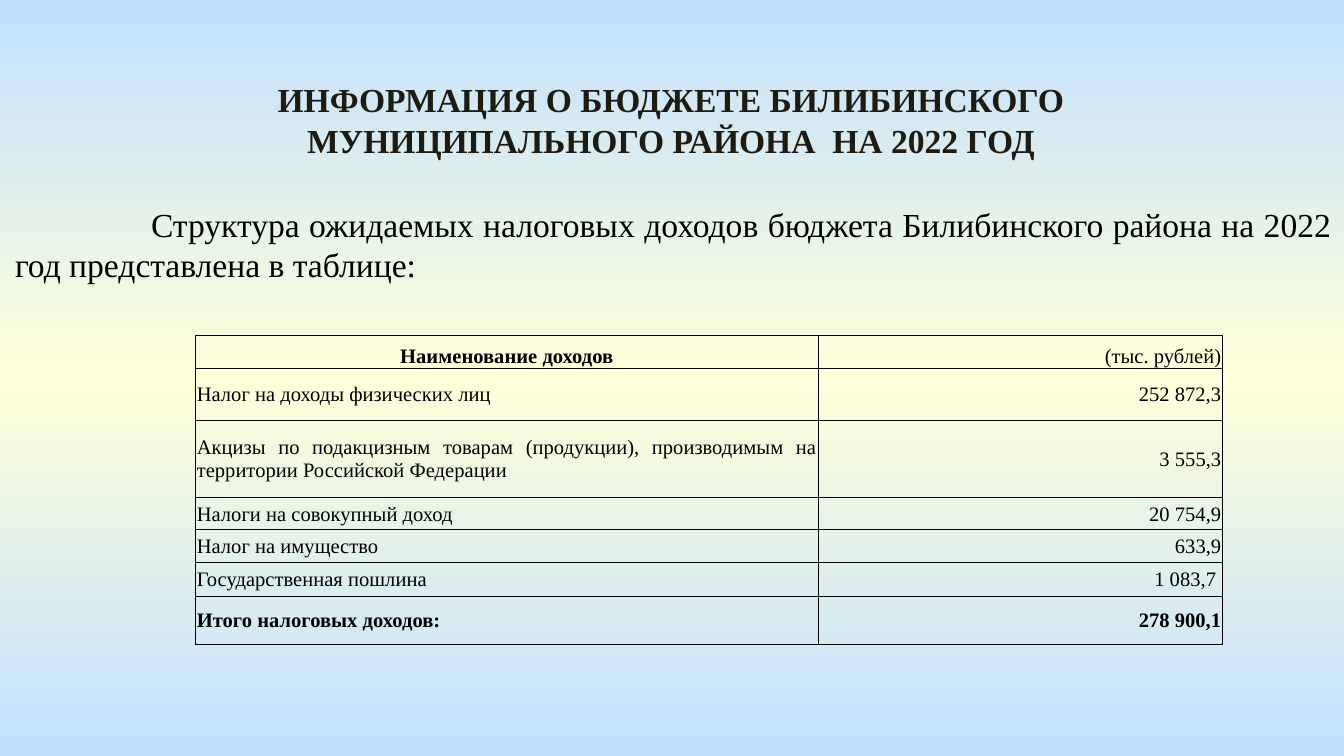
from copy import deepcopy

from lxml import etree
from pptx import Presentation
from pptx import util as u
from pptx.dml.color import RGBColor
from pptx.enum import text as t
from pptx.oxml import ns

FONT = "Times New Roman"
INK = "000000"
ALIGN = {"l": t.PP_ALIGN.LEFT, "c": t.PP_ALIGN.CENTER,
         "r": t.PP_ALIGN.RIGHT, "j": t.PP_ALIGN.JUSTIFY}
HEAD = ("Наименование доходов", "(тыс. рублей)")
TAXES = [
    ("Налог на доходы физических лиц", "252 872,3"),
    ("Акцизы по подакцизным товарам (продукции), производимым на "
     "территории Российской Федерации", "3 555,3"),
    ("Налоги на совокупный доход", "20 754,9"),
    ("Налог на имущество", "633,9"),
    ("Государственная пошлина", "1 083,7 "),
]
TOTAL = ("Итого налоговых доходов:", "278 900,1")
WIDTHS = (11.76, 7.64)
HEIGHTS = (0.62, 0.98, 1.47, 0.6, 0.62, 0.64, 0.91)


def color(code):
    return RGBColor.from_string(code)


def write(frame, words, size=18, bold=False, ink=INK, align="l"):
    par = frame.paragraphs[0]
    par.alignment = ALIGN[align]
    par.space_before = u.Pt(0)
    run = par.add_run()
    run.text = words
    font = run.font
    font.name, font.size, font.bold = FONT, u.Pt(size), bold
    font.color.rgb = color(ink)
    return par


def place(shape, box):
    shape.left, shape.top, shape.width, shape.height = map(u.Cm, box)
    frame = shape.text_frame
    frame.word_wrap = True
    frame.auto_size = t.MSO_AUTO_SIZE.SHAPE_TO_FIT_TEXT
    return frame


def backdrop(slide, edge, mid):
    fill = slide.background.fill
    fill.gradient()
    fill.gradient_angle = 90
    first = slide.element.xpath(".//a:gs")[0]
    first.addnext(deepcopy(first))
    for stop, pos, code in zip(fill.gradient_stops, (0, 0.5, 1), (edge, mid, edge)):
        stop.position = pos
        stop.color.rgb = color(code)


def title(slide, box):
    frame = place(slide.shapes.title, box)
    frame.vertical_anchor = t.MSO_ANCHOR.TOP
    write(frame, "ИНФОРМАЦИЯ О БЮДЖЕТЕ БИЛИБИНСКОГО МУНИЦИПАЛЬНОГО РАЙОНА  НА 2022 ГОД",
          bold=True, ink="1E1C11", align="c")


def intro(slide, box):
    frame = place(slide.placeholders[1], box)
    par = write(frame, "Структура ожидаемых налоговых доходов бюджета Билибинского "
                "района на 2022 год представлена в таблице:", align="j")
    # First-line indent, no bullet
    props = par._p.get_or_add_pPr()
    props.set("marL", "0")
    props.set("indent", str(u.Cm(2.57)))
    etree.SubElement(props, ns.qn("a:buNone"))


def border(cell, width=0.5):
    props = cell._tc.get_or_add_tcPr()
    for side in ("lnL", "lnR", "lnT", "lnB"):
        line = etree.SubElement(props, ns.qn("a:" + side), w=str(u.Pt(width)))
        fill = etree.SubElement(line, ns.qn("a:solidFill"))
        etree.SubElement(fill, ns.qn("a:srgbClr"), val=INK)


def taxes(slide, box):
    rows = [HEAD, *TAXES, TOTAL]
    grid = slide.shapes.add_table(len(rows), 2, *map(u.Cm, box)).table
    grid.first_row = grid.horz_banding = False
    for col, width in zip(grid.columns, WIDTHS):
        col.width = u.Cm(width)
    for r, (row, height) in enumerate(zip(rows, HEIGHTS)):
        grid.rows[r].height = u.Cm(height)
        for c, words in enumerate(row):
            cell = grid.cell(r, c)
            cell.margin_left = cell.margin_right = cell.margin_top = u.Cm(0.02)
            cell.margin_bottom = 0
            head = row is HEAD
            cell.vertical_anchor = t.MSO_ANCHOR.BOTTOM if head else t.MSO_ANCHOR.MIDDLE
            write(cell.text_frame, words, size=11,
                  bold=row is TOTAL or (head and c == 0),
                  align="r" if c else "c" if head else "j")
            border(cell)
            cell.fill.background()


def main():
    deck = Presentation()
    deck.slide_width, deck.slide_height = u.Cm(25.4), u.Cm(14.29)
    slide = deck.slides.add_slide(deck.slide_layouts[1])
    backdrop(slide, "C1E0FF", "FFFFD9")
    title(slide, (2.87, 1.37, 19.63, 1.8))
    intro(slide, (0.03, 3.73, 25.4, 1.8))
    taxes(slide, (3.7, 6.34, sum(WIDTHS), sum(HEIGHTS)))
    deck.save("out.pptx")


if __name__ == "__main__":
    main()
